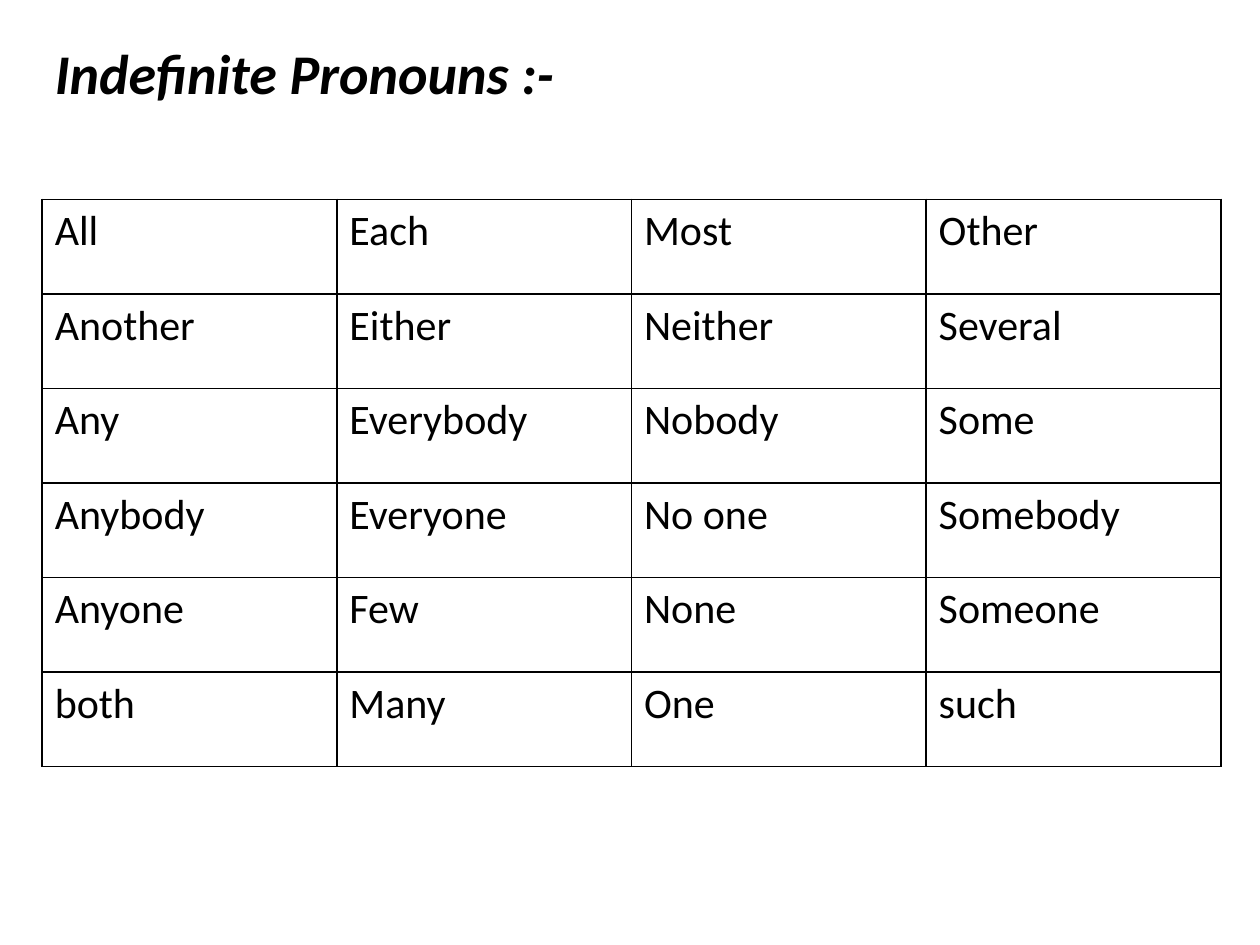
from lxml.etree import SubElement
from pptx import Presentation
from pptx.dml.color import RGBColor as Rgb
from pptx.enum.text import MSO_ANCHOR as Anchor, MSO_AUTO_SIZE as AutoSize, PP_ALIGN as Align
from pptx.oxml.ns import qn
from pptx.util import Cm, Pt

COLORS = {"text": "000000", "border": "000000", "paper": "FFFFFF"}
PRONOUNS = [
    ["All", "Each", "Most", "Other"],
    ["Another", "Either", "Neither", "Several"],
    ["Any", "Everybody", "Nobody", "Some"],
    ["Anybody", "Everyone", "No one", "Somebody"],
    ["Anyone", "Few", "None", "Someone"],
    ["both", "Many", "One", "such"],
]


def write(frame, text, size=24, bold=False, italic=False, color="text", font="Calibri"):
    """Put one left-aligned, formatted line of text into a text frame."""
    para = frame.paragraphs[0]
    para.alignment = Align.LEFT
    span = para.add_run()
    span.text = text
    span.font.name = font
    span.font.size = Pt(size)
    span.font.bold = bold
    span.font.italic = italic
    span.font.color.rgb = Rgb.from_string(COLORS[color])


class PageBuilder:
    """Holds the border style and the current slide."""

    def __init__(self, page, border_width=1):
        self.page = page
        self.border_width = border_width

    def title(self, text, left, top, width, height):
        box = self.page.shapes.title
        box.left, box.top, box.width, box.height = map(Cm, (left, top, width, height))
        frame = box.text_frame
        frame.word_wrap = True
        frame.auto_size = AutoSize.NONE
        frame.vertical_anchor = Anchor.TOP
        write(frame, text, size=32, bold=True, italic=True)

    def border(self, cell):
        properties = cell._tc.get_or_add_tcPr()
        for side in ("lnL", "lnR", "lnT", "lnB"):
            line = SubElement(properties, qn(f"a:{side}"), w=str(Pt(self.border_width)))
            fill = SubElement(line, qn("a:solidFill"))
            SubElement(fill, qn("a:srgbClr"), val=COLORS["border"])

    def table(self, rows, left, top, column_width, row_height):
        columns = len(rows[0])
        table = self.page.shapes.add_table(
            len(rows), columns, Cm(left), Cm(top),
            Cm(column_width * columns), Cm(row_height * len(rows))).table
        table.first_row = table.horz_banding = False
        for r, words in enumerate(rows):
            for c, word in enumerate(words):
                cell = table.cell(r, c)
                self.border(cell)
                cell.fill.solid()
                cell.fill.fore_color.rgb = Rgb.from_string(COLORS["paper"])
                write(cell.text_frame, word)


def main():
    deck = Presentation()
    deck.slide_width, deck.slide_height = Cm(25.4), Cm(19.05)
    title_only = deck.slide_layouts[5]
    builder = PageBuilder(deck.slides.add_slide(title_only))

    # Heading
    builder.title("Indefinite Pronouns :-", left=0.85, top=0.64, width=13.76, height=1.62)

    # Word grid
    builder.table(PRONOUNS, left=0.85, top=4.02, column_width=5.94, row_height=1.905)

    deck.save("out.pptx")


if __name__ == "__main__":
    main()
